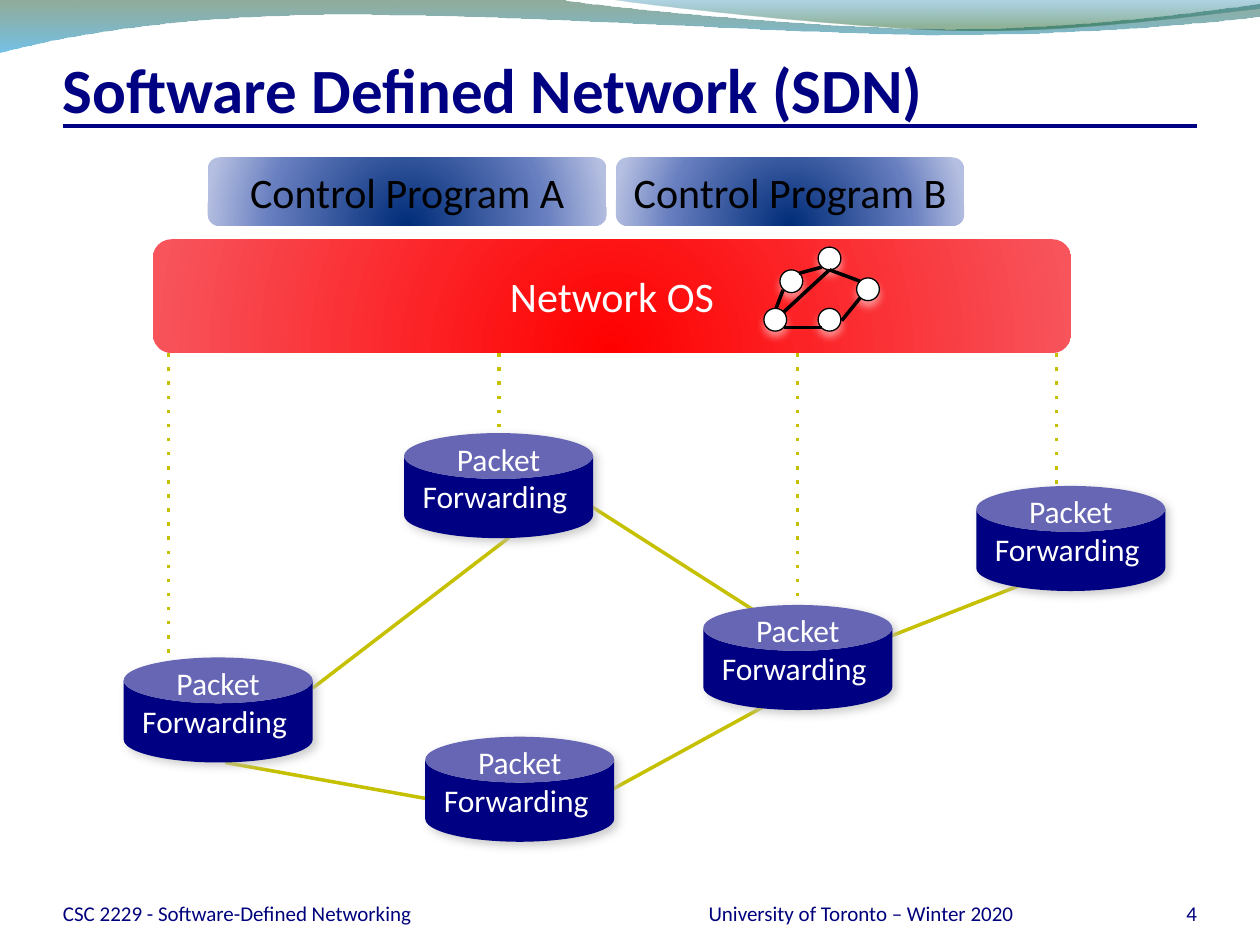
from lxml import etree
from pptx import Presentation
from pptx.dml.color import RGBColor
from pptx.enum.dml import MSO_LINE
from pptx.enum.shapes import MSO_CONNECTOR, MSO_SHAPE
from pptx.enum.text import MSO_ANCHOR, PP_ALIGN
from pptx.oxml import parse_xml
from pptx.oxml.ns import qn
from pptx.util import Pt

LEFT, MID, RIGHT = PP_ALIGN.LEFT, PP_ALIGN.CENTER, PP_ALIGN.RIGHT
MIDDLE, BOTTOM = MSO_ANCHOR.MIDDLE, MSO_ANCHOR.BOTTOM
ROUND, CAN, OVAL = MSO_SHAPE.ROUNDED_RECTANGLE, MSO_SHAPE.CAN, MSO_SHAPE.OVAL
DOT, STRAIGHT = MSO_LINE.ROUND_DOT, MSO_CONNECTOR.STRAIGHT
NS = "http://schemas.openxmlformats.org/drawingml/2006/main"

HUES = {"navy": "000082", "foot": "00007C", "black": "000000",
        "white": "FFFFFF", "link": "C5C000", "shade": "BFBFBF"}
BLUES = [(0, "002C78", 100), (68, "677EBF", 100), (100, "B5BFE1", 100)]
REDS = [(0, "FF0000", 100), (100, "F7545C", 100)]
SEA = [(0, "0F461E", 45), (100, "0090D6", 55)]
SKY = [(0, "0076AF", 30), (80, "0D5821", 45)]
LINEAR = '<a:lin ang="5400000" scaled="0"/>'
RADIAL = ('<a:path path="circle"><a:fillToRect l="50000" t="130000" '
          'r="50000" b="-30000"/></a:path>')


def hue(name):
    """Turn a colour name into an RGB value."""
    return RGBColor.from_string(HUES[name])


def blend(shape, stops, way):
    """Fill a shape with a gradient and drop its outline."""
    marks = "".join(
        f'<a:gs pos="{pos * 1000}"><a:srgbClr val="{tint}">'
        f'<a:alpha val="{alpha * 1000}"/></a:srgbClr></a:gs>'
        for pos, tint, alpha in stops)
    shape.line.fill.background()
    shape.fill.background()
    props = shape._element.spPr
    props.replace(props.find(qn("a:noFill")), parse_xml(
        f'<a:gradFill xmlns:a="{NS}" rotWithShape="1">'
        f'<a:gsLst>{marks}</a:gsLst>{way}</a:gradFill>'))
    shape.shadow.inherit = False


def shade(shape, name, alpha, blur, gap, angle):
    """Give a shape a soft outer shadow."""
    shape.shadow.inherit = False
    base = shape._element.spPr.find(qn("a:effectLst"))
    drop = etree.SubElement(base, qn("a:outerShdw"), blurRad=str(Pt(blur)),
                            dist=str(Pt(gap)), dir=str(angle * 60000))
    tint = etree.SubElement(drop, qn("a:srgbClr"), val=HUES[name])
    etree.SubElement(tint, qn("a:alpha"), val=str(alpha * 1000))


def write(shape, lines, size, name, align=MID, anchor=MIDDLE, wrap=True,
          bold=False, inset=0):
    """Put formatted lines of text into a shape."""
    frame = shape.text_frame
    form = {"word_wrap": wrap, "vertical_anchor": anchor,
            "margin_left": 0, "margin_right": 0,
            "margin_top": Pt(inset), "margin_bottom": 0}
    for key, value in form.items():
        setattr(frame, key, value)
    frame.text = "\n".join(lines)
    for para in frame.paragraphs:
        para.alignment = align
        font = para.runs[0].font
        for key, value in {"name": "Calibri", "size": Pt(size),
                           "bold": bold}.items():
            setattr(font, key, value)
        font.color.rgb = hue(name)


def label(shapes, box, *args, **form):
    """Add a text box."""
    write(shapes.add_textbox(*map(Pt, box)), *args, **form)


def join(shapes, ends, name, width=2, dots=False):
    """Draw a straight line between two points."""
    line = shapes.add_connector(STRAIGHT, *map(Pt, ends))
    line.line.color.rgb = hue(name)
    line.line.width = Pt(width)
    props = line._element.spPr
    if dots:
        line.line.dash_style = DOT
        props.find(".//" + qn("a:prstDash")).set("val", "dot")
    etree.SubElement(props, qn("a:effectLst"))


def wave(shapes, start, steps, stops):
    """Draw one closed outline from line and curve steps."""
    pen = shapes.build_freeform(*map(Pt, start), scale=1.0)
    pen.add_line_segments([tuple(map(Pt, spot)) for step in steps
                           for spot in step], close=True)
    shape = pen.convert_to_shape()
    legs = iter(shape._element.spPr.findall(".//" + qn("a:lnTo")))
    for step in steps:
        first, *rest = [next(legs) for _ in step]
        if rest:
            first.tag = qn("a:cubicBezTo")
            for leg in rest:
                first.append(leg[0])
                leg.getparent().remove(leg)
    blend(shape, stops, LINEAR)


def waves(shapes):
    """Draw the two waves along the top edge."""
    wave(shapes, (0, -0.7), [
        [(317, -0.7)], [(343, 4.3), (478, 16.6), (546, 16.6)],
        [(614, 16.6), (690, 6.5), (720, 2.2)], [(720.7, 9.4)],
        [(708, 11.5), (626, 20.2), (537, 20.2)],
        [(448, 19.4), (275, 7.2), (185, 8.6)],
        [(93, 9.4), (33, 21.6), (-0.7, 30.2)]], SEA)
    wave(shapes, (345, -0.7), [
        [(366, 2.9), (491, 16.6), (554, 17.3)],
        [(616, 18), (692, 7.9), (720, 5)], [(720, -0.7)]], SKY)


def header(shapes, x, y, w, h):
    """Place the title over its rule."""
    label(shapes, (x, y, w, h), ["Software Defined Network (SDN)"], 36,
          "navy", align=LEFT, anchor=BOTTOM, bold=True, inset=3.6)
    join(shapes, (x, y + h, x + w, y + h), "navy", 2.25)


def panel(shapes, box, text, stops, name):
    """Draw a rounded box with a gradient and a caption."""
    shape = shapes.add_shape(ROUND, *map(Pt, box))
    blend(shape, stops, RADIAL)
    write(shape, [text], 24, name)


def switch(shapes, x, y, w=108, h=60):
    """Draw one packet forwarding switch."""
    can = shapes.add_shape(CAN, *map(Pt, (x, y, w, h)))
    can.adjustments[0] = 0.436
    can.fill.solid()
    can.fill.fore_color.rgb = hue("navy")
    can.line.fill.background()
    shade(can, "shade", 75, 5, 3, 45)
    write(can, ["Packet", "Forwarding "], 18, "white", anchor=BOTTOM,
          wrap=False)


def graph(shapes, x, y, size=13):
    """Draw the small network map as one group."""
    group = shapes.add_group_shape().shapes
    for left, top in ((9.2, 13), (31, 0), (31, 35), (53, 17.6), (0, 35)):
        node = group.add_shape(OVAL, *map(Pt, (x + left, y + top, size, size)))
        node.fill.solid()
        node.fill.fore_color.rgb = hue("white")
        node.line.color.rgb = hue("black")
        node.line.width = Pt(0.75)
        shade(node, "white", 48, 4.5, 3, 90)
    for a, b, c, d in ((20, 15, 33, 11.5), (7, 35, 11, 24.5),
                       (11.5, 37, 37.5, 13), (11.5, 46, 33, 46),
                       (37.5, 13, 55, 19.5), (44.5, 42, 55, 29)):
        join(group, (x + a, y + b, x + c, y + d), "black")


def network(shapes, x, y):
    """Draw the links, the network system and the switches."""
    for a, b, c, d in ((108, 256.5, 239.6, 155.6), (256, 145.5, 360, 212),
                       (264, 322.7, 385, 256.5), (58, 299, 190, 322.7),
                       (420, 234, 533.3, 189.5)):
        join(shapes, (x + a, y + b, x + c, y + d), "link")
    for left, end in ((25.7, 251), (214.3, 111), (385, 212), (533, 145.5)):
        join(shapes, (x + left, y + 33, x + left, y + end), "link", dots=True)
    panel(shapes, (x + 16.5, y, 525, 65), "Network OS", REDS, "white")
    for left, top in ((0, 239), (172.3, 284.3), (160.2, 110.8),
                      (331.2, 209), (487.2, 141)):
        switch(shapes, x + left, y + top)
    graph(shapes, x + 365.8, y + 4.5)


def footer(shapes, x, y, w, h):
    """Place the course, the school and the page number."""
    for left, wide, text, align in (
            (0, 330, "CSC 2229 - Software-Defined Networking", LEFT),
            (342, 228, "University of Toronto – Winter 2020", MID),
            (w - 60, 60, "4", RIGHT)):
        label(shapes, (x + left, y, wide, h), [text], 12, "foot",
              align=align, anchor=BOTTOM)


def main():
    """Build and save the slide."""
    deck = Presentation()
    deck.slide_width, deck.slide_height = Pt(720), Pt(540)
    shapes = deck.slides.add_slide(deck.slide_layouts[6]).shapes
    waves(shapes)
    header(shapes, 36, 24, 648, 48)
    for left, wide, text in ((118.7, 228, "Control Program A"),
                             (352, 199, "Control Program B")):
        panel(shapes, (left, 90, wide, 39), text, BLUES, "black")
    network(shapes, 70.7, 136.7)
    footer(shapes, 36, 500, 648, 29)
    deck.save("out.pptx")


if __name__ == "__main__":
    main()
